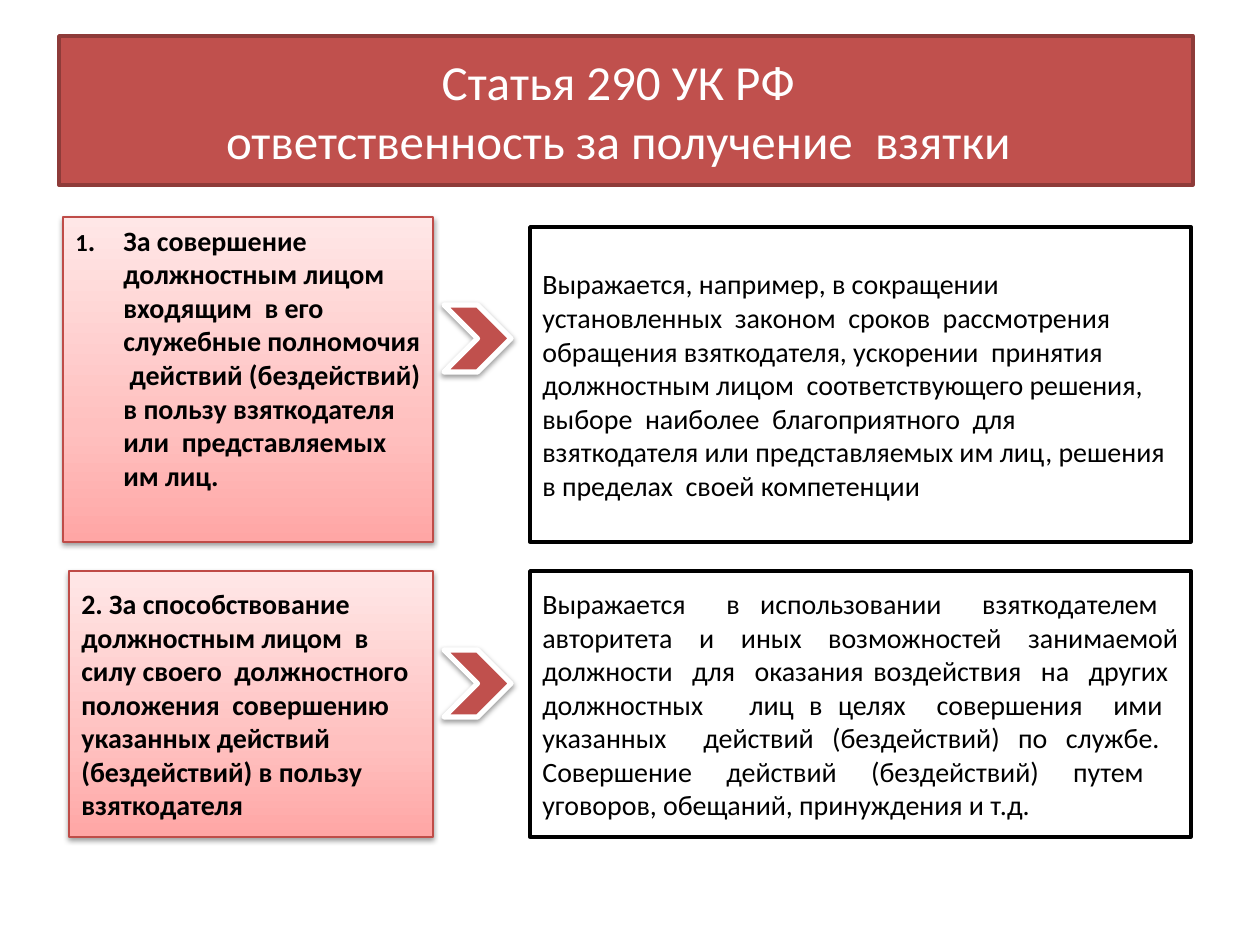
import pptx
import pptx.dml.color
import pptx.enum.shapes
import pptx.enum.text
import pptx.oxml
import pptx.oxml.ns
import pptx.util

SCALE = 914400 / 126
SHAPES = pptx.enum.shapes.MSO_SHAPE
ALIGN = pptx.enum.text.PP_ALIGN
ANCHOR = pptx.enum.text.MSO_ANCHOR
NAMESPACE = pptx.oxml.ns.nsdecls("a")
SHADOW = (
    f'<a:outerShdw {NAMESPACE} blurRad="39370" dist="20320" dir="5400000" rotWithShape="0">'
    '<a:srgbClr val="000000"><a:alpha val="38000"/></a:srgbClr></a:outerShdw>'
)
PINK_STOPS = [(0, "FFA6A5"), (35, "FFC0BF"), (100, "FFE7E7")]


def color(value):
    return pptx.dml.color.RGBColor.from_string(value)


def add_box(kind, bounds, fill, line, width, shadow=False):
    box = page.shapes.add_shape(kind, *[round(length * SCALE) for length in bounds])
    box.shadow.inherit = False
    if shadow:
        effects = box._element.spPr.find(pptx.oxml.ns.qn("a:effectLst"))
        effects.append(pptx.oxml.parse_xml(SHADOW))
    if fill == "pink":
        box.fill.gradient()
        box.fill.gradient_angle = 90
        stops = box._element.spPr.find(".//" + pptx.oxml.ns.qn("a:gsLst"))
        for stop in list(stops):
            stops.remove(stop)
        for position, shade in PINK_STOPS:
            stops.append(pptx.oxml.parse_xml(
                f'<a:gs {NAMESPACE} pos="{position * 1000}"><a:srgbClr val="{shade}"/></a:gs>'))
    else:
        box.fill.solid()
        box.fill.fore_color.rgb = color(fill)
    box.line.color.rgb = color(line)
    box.line.width = pptx.util.Pt(width)
    return box


deck = pptx.Presentation()
deck.slide_width = pptx.util.Inches(10)
deck.slide_height = pptx.util.Inches(7.5)
page = deck.slides.add_slide(deck.slide_layouts[6])

title = "Статья 290 УК РФ\vответственность за получение  взятки"
offense = (
    "1.\tЗа совершение  должностным лицом входящим  в его  служебные полномочия  "
    "действий (бездействий) в пользу взяткодателя  или  представляемых им лиц."
)
example = (
    "Выражается, например, в сокращении  установленных  законом  сроков  рассмотрения  "
    "обращения взяткодателя, ускорении  принятия  должностным лицом  соответствующего решения, "
    "выборе  наиболее  благоприятного  для  взяткодателя или представляемых им лиц, "
    "решения в пределах  своей компетенции"
)
assistance = (
    "2. За способствование\nдолжностным лицом  в силу своего  должностного  положения  "
    "совершению  указанных действий (бездействий) в пользу взяткодателя"
)
influence = (
    "Выражается  в использовании  взяткодателем  авторитета  и  иных  возможностей  "
    "занимаемой должности  для  оказания воздействия  на  других  должностных   лиц в целях  "
    "совершения  ими  указанных  действий (бездействий) по службе.  Совершение действий "
    "(бездействий) путем  уговоров, обещаний, принуждения и т.д."
)

header = ("C0504D", "8E3B39", 2)
cause = ("pink", "BF4C48", 0.75, True)
detail = ("FFFFFF", "000000", 2)
panels = [
    ((59, 36, 1134, 149), header, title, 28, "FFFFFF", ALIGN.CENTER),
    ((63, 217, 370, 325), cause, offense, 16, "000000", ALIGN.LEFT),
    ((530, 227, 661, 315), detail, example, 16, "000000", ALIGN.LEFT),
    ((69, 571, 364, 266), cause, assistance, 16, "000000", ALIGN.LEFT),
    ((530, 571, 661, 266), detail, influence, 16, "000000", ALIGN.JUSTIFY),
]
for bounds, style, text, size, ink, alignment in panels:
    box = add_box(SHAPES.RECTANGLE, bounds, *style)
    frame = box.text_frame
    frame.word_wrap = True
    frame.vertical_anchor = ANCHOR.MIDDLE
    frame.text = text
    for para in frame.paragraphs:
        para.alignment = alignment
        para.font.name = "Calibri"
        para.font.size = pptx.util.Pt(size)
        para.font.bold = style is cause
        para.font.color.rgb = color(ink)
    if text == title:
        frame.margin_right = round(28 * SCALE)
    if text == offense:
        frame.vertical_anchor = ANCHOR.TOP
        para = frame.paragraphs[0]
        indent = round(48 * SCALE)
        para._p.get_or_add_pPr().set("marL", str(indent))
        para._p.get_or_add_pPr().set("indent", str(-indent))
        span = para.runs[0]
        span.text = "1"
        span.font.size = pptx.util.Pt(14)
        para.add_run().text = offense[1:]

for top in (305, 650):
    add_box(SHAPES.CHEVRON, (444, top, 67, 67), "C0504D", "FFFFFF", 3, True)

deck.save("out.pptx")
